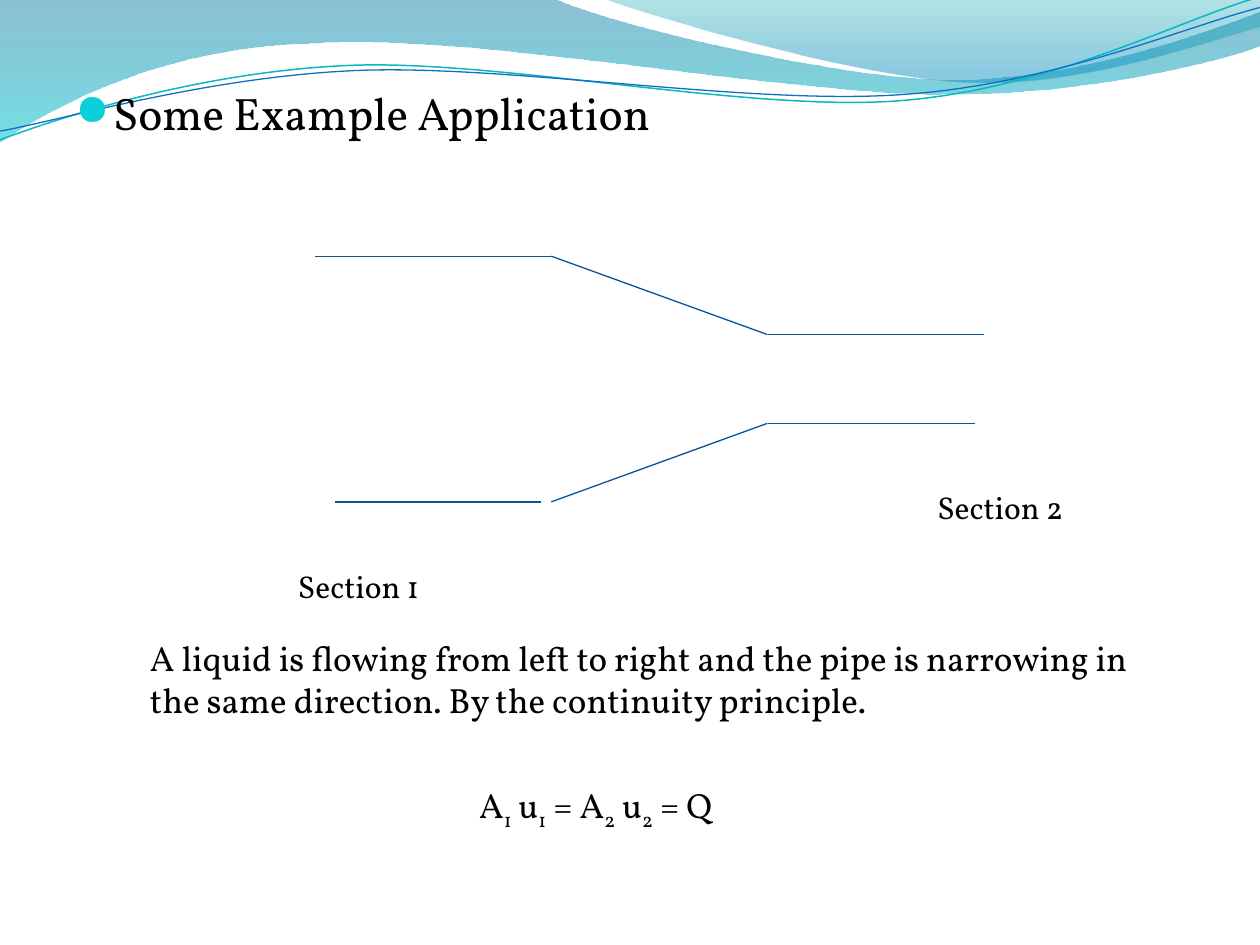
import dataclasses
import math
import typing

import lxml.etree
import pptx
import pptx.dml.color
import pptx.enum.shapes
import pptx.enum.text
import pptx.oxml.ns
import pptx.util

FONT = "Vollkorn"
BULLET_FONT = "OpenSymbol"
COLORS = {
    "text": "000000",
    "bullet": "0BD0D9",
    "pipe": "095295",
    "wave_blue": "0074A1",
    "wave_cyan": "00C6CF",
    "crest_teal": "00A1A9",
    "crest_blue": "008BBF",
    "teal_stroke": "0AB8BF",
    "blue_stroke": "0F6FC6",
}
STROKE_TILT = -2.7
Point = tuple[float, float]


@dataclasses.dataclass
class Stop:
    position: float
    color: str
    opacity: int


@dataclasses.dataclass
class Wave:
    start: Point
    segments: list[tuple[Point, ...]]
    stops: tuple[Stop, ...] = ()
    stroke: str = ""
    stroke_width: float = 0
    center: Point = (0, 0)
    tilt: float = 0


@dataclasses.dataclass
class Label:
    left: float
    top: float
    width: float
    height: float
    text: str
    size: float
    alignment: typing.Any = pptx.enum.text.PP_ALIGN.LEFT


WAVES = [
    Wave((0, 0), [
        ((316.8, -0.7),),
        ((342.7, 12.2), (478.1, 45.4), (545.8, 45.4)),
        ((614.2, 45.4), (689.8, 18.7), (720, 6.5)),
        ((720.7, 25.9),),
        ((707.8, 31.7), (626.4, 54.7), (537.1, 54)),
        ((447.8, 54), (275, 20.2), (185, 24.5)),
        ((92.9, 25.9), (33.1, 59.8), (-0.7, 81.4)),
        ((0, 0),),
    ], stops=(Stop(0, "wave_blue", 45), Stop(1, "wave_cyan", 55))),
    Wave((344.9, -0.7), [
        ((366.5, 7.9), (491, 44.6), (553.7, 46.8)),
        ((616.3, 49.7), (691.9, 23), (720, 15.1)),
        ((720, 0),),
        ((344.9, -0.7),),
    ], stops=(Stop(0, "crest_teal", 30), Stop(0.8, "crest_blue", 45))),
    Wave((0, 79.9), [
        ((34.6, 67), (113.8, 41), (199.4, 37.4)),
        ((284.4, 33.8), (427, 64.1), (513.4, 57.6)),
        ((599.8, 51.1), (675.4, 10.8), (718.6, -1.4)),
    ], stroke="teal_stroke", stroke_width=0.85, center=(359.3, 41.4), tilt=STROKE_TILT),
    Wave((0, 74.9), [
        ((33.8, 69.1), (118.1, 43.9), (203.8, 40.3)),
        ((290.2, 36.7), (429.8, 60.5), (516.2, 54)),
        ((601.9, 48.2), (677.5, 15.1), (720, 4.3)),
    ], stroke="blue_stroke", stroke_width=0.75, center=(359.6, 42.5), tilt=STROKE_TILT),
]

PIPE_WALLS = [
    [(180, 146.4), (315, 146.4)],
    [(315, 146.4), (438.6, 191.2)],
    [(438.6, 191.2), (562.4, 191.2)],
    [(191.5, 286.8), (309.4, 286.8)],
    [(315, 286.8), (438.6, 241.9)],
    [(438.6, 241.9), (556.9, 241.9)],
]

HEADING = Label(36, 44.8, 648, 452.9, "Some Example Application", 26)
LABELS = [
    Label(163.2, 320.4, 101.5, 29, "Section 1", 18),
    Label(528.5, 275.4, 90, 29, "Section 2", 18),
    Label(78.6, 360, 579.6, 55.6,
          "A liquid is flowing from left to right and the pipe is narrowing in "
          "the same direction. By the continuity principle.", 20),
]
FORMULA = Label(208.2, 444.2, 264.2, 31.5, "", 20, pptx.enum.text.PP_ALIGN.CENTER)
FORMULA_PARTS = ["A", "1", " u", "1", " = A", "2", " u", "2", " = Q"]


def rgb(name: str) -> pptx.dml.color.RGBColor:
    return pptx.dml.color.RGBColor.from_string(COLORS[name])


def add_xml(parent, tag: str, **attributes: str):
    return lxml.etree.SubElement(parent, pptx.oxml.ns.qn(tag), attributes)


def in_points(point: Point) -> tuple:
    return pptx.util.Pt(point[0]), pptx.util.Pt(point[1])


def level(point: Point, wave: Wave) -> Point:
    angle = math.radians(-wave.tilt)
    across, down = point[0] - wave.center[0], point[1] - wave.center[1]
    return (wave.center[0] + across * math.cos(angle) - down * math.sin(angle),
            wave.center[1] + across * math.sin(angle) + down * math.cos(angle))


def bend_segments(shape, segments: list[tuple[Point, ...]]) -> None:
    lines = iter(list(shape.element.spPr.iter(pptx.oxml.ns.qn("a:lnTo"))))
    for segment in segments:
        first, *others = [next(lines) for _ in segment]
        if others:
            outline = first.getparent()
            curve = outline.makeelement(pptx.oxml.ns.qn("a:cubicBezTo"))
            first.addprevious(curve)
            for line in (first, *others):
                curve.append(line[0])
                outline.remove(line)


def draw_wave(slide, wave: Wave) -> None:
    vertices = [in_points(level(p, wave)) for segment in wave.segments for p in segment]
    builder = slide.shapes.build_freeform(*in_points(level(wave.start, wave)))
    builder.add_line_segments(vertices, close=bool(wave.stops))
    shape = builder.convert_to_shape()
    bend_segments(shape, wave.segments)
    shape.rotation = wave.tilt
    shape.shadow.inherit = False
    if not wave.stops:
        shape.fill.background()
        shape.line.color.rgb = rgb(wave.stroke)
        shape.line.width = pptx.util.Pt(wave.stroke_width)
        return
    shape.fill.gradient()
    shape.fill.gradient_angle = 270
    for gradient_stop, stop in zip(shape.fill.gradient_stops, wave.stops):
        gradient_stop.position = stop.position
        gradient_stop.color.rgb = rgb(stop.color)
    colors = shape.element.spPr.iter(pptx.oxml.ns.qn("a:srgbClr"))
    for color, stop in zip(list(colors), wave.stops):
        add_xml(color, "a:alpha", val=str(stop.opacity * 1000))
    shape.line.fill.background()


def draw_wall(slide, start: Point, end: Point) -> None:
    connector = slide.shapes.add_connector(
        pptx.enum.shapes.MSO_CONNECTOR.STRAIGHT, *in_points(start), *in_points(end))
    connector.line.color.rgb = rgb("pipe")
    connector.line.width = pptx.util.Pt(0.75)
    add_xml(connector.element.spPr, "a:effectLst")


def draw_label(slide, label: Label, parts: typing.Sequence[str] = ()):
    shape = slide.shapes.add_textbox(
        *in_points((label.left, label.top)), *in_points((label.width, label.height)))
    shape.text_frame.word_wrap = True
    paragraph = shape.text_frame.paragraphs[0]
    paragraph.alignment = label.alignment
    if label.text:
        paragraph.text = label.text
    for part in parts:
        paragraph.add_run().text = part
    for run in paragraph.runs:
        run.font.name = FONT
        run.font.size = pptx.util.Pt(label.size)
        run.font.color.rgb = rgb("text")
    return paragraph


def draw_heading(slide) -> None:
    paragraph = draw_label(slide, HEADING)
    properties = paragraph._p.get_or_add_pPr()
    indent = pptx.util.Pt(21.6)
    properties.set("marL", str(indent))
    properties.set("indent", str(-indent))
    add_xml(add_xml(properties, "a:spcBef"), "a:spcPct", val="20000")
    add_xml(add_xml(properties, "a:buClr"), "a:srgbClr", val=COLORS["bullet"])
    add_xml(properties, "a:buSzPct", val="95000")
    add_xml(properties, "a:buFont", typeface=BULLET_FONT)
    add_xml(properties, "a:buChar", char="●")


def draw_formula(slide) -> None:
    for run in draw_label(slide, FORMULA, FORMULA_PARTS).runs:
        if run.text.isdigit():
            run.font._element.set("baseline", "-25000")


def main() -> None:
    presentation = pptx.Presentation()
    presentation.slide_width, presentation.slide_height = in_points((720, 540))
    slide = presentation.slides.add_slide(presentation.slide_layouts[6])
    for wave in WAVES:
        draw_wave(slide, wave)
    draw_heading(slide)
    for start, end in PIPE_WALLS:
        draw_wall(slide, start, end)
    for label in LABELS:
        draw_label(slide, label)
    draw_formula(slide)
    presentation.save("out.pptx")


if __name__ == "__main__":
    main()
